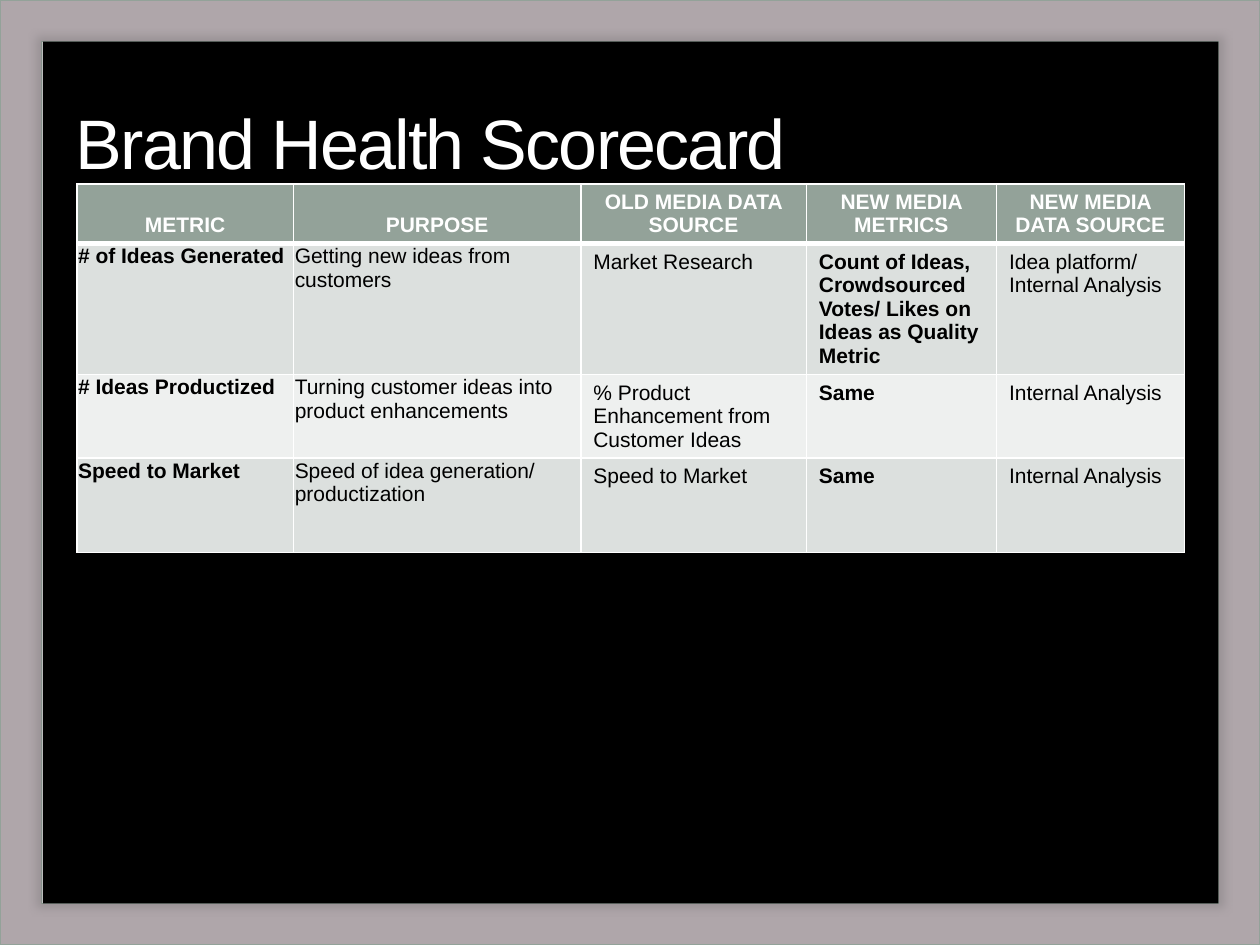
from lxml import etree
from pptx import Presentation
from pptx import util as u
from pptx.dml.color import RGBColor
from pptx.enum import shapes, text
from pptx.oxml import ns

HUES = {
    "white": "FFFFFF", "black": "000000", "mauve": "AFA6AA", "sage": "93A299",
    "shade": "595959", "band": "DCE0DE", "pale": "EEF0EF",
}
FONT = "Arial"
COLS = [1.72, 2.28, 1.79, 1.51, 1.49]
ROWS = [0.47, 1.04, 0.66, 0.75]
TIGHT = {0, 1}
BOLD = {0, 3}
DATA = [
    ["METRIC", "PURPOSE", "OLD MEDIA DATA SOURCE", "NEW MEDIA METRICS",
     "NEW MEDIA DATA SOURCE"],
    ["# of Ideas Generated", "Getting new ideas from customers", "Market Research",
     "Count of Ideas, Crowdsourced Votes/ Likes on Ideas as Quality Metric",
     "Idea platform/ Internal Analysis"],
    ["# Ideas Productized", "Turning customer ideas into product enhancements",
     "% Product Enhancement from Customer Ideas", "Same", "Internal Analysis"],
    ["Speed to Market", "Speed of idea generation/ productization",
     "Speed to Market", "Same", "Internal Analysis"],
]


def hue(name):
    return RGBColor.from_string(HUES[name])


def inches(box):
    return [u.Inches(n) for n in box]


def node(root, tag, **attrs):
    return etree.SubElement(root, ns.qn(tag), {k: str(v) for k, v in attrs.items()})


def style(par, size, color, bold=False):
    font = par.font
    font.name, font.size, font.bold = FONT, u.Pt(size), bold
    font.color.rgb = hue(color)


def add_panel(slide, kind, box, color):
    panel = slide.shapes.add_shape(kind, *inches(box))
    panel.shadow.inherit = False
    panel.fill.solid()
    panel.fill.fore_color.rgb = hue(color)
    panel.line.fill.background()
    slide.shapes.title.element.addprevious(panel.element)
    return panel


def add_back(slide, box):
    left, top, width, height = box
    frame = add_panel(slide, shapes.MSO_SHAPE.FRAME, box, "mauve")
    frame.adjustments[0] = 0.044
    frame.line.color.rgb = hue("sage")
    frame.line.width = u.Pt(0.75)

    inner = (left + 0.34, top + 0.33, width - 0.67, height - 0.66)
    board = add_panel(slide, shapes.MSO_SHAPE.RECTANGLE, inner, "black")
    glow = board.element.spPr.find(ns.qn("a:effectLst"))
    shade = node(glow, "a:outerShdw", blurRad=u.Pt(5), dist=0, dir=0,
                 sx=101000, sy=101000, algn="ctr", rotWithShape=0)
    tint = node(shade, "a:srgbClr", val=HUES["shade"])
    node(tint, "a:alpha", val=25000)


def add_title(slide, box):
    title = slide.shapes.title
    title.left, title.top, title.width, title.height = inches(box)
    frame = title.text_frame
    frame.text = "Brand Health Scorecard"
    frame.vertical_anchor = text.MSO_ANCHOR.MIDDLE
    par = frame.paragraphs[0]
    par.alignment = text.PP_ALIGN.LEFT
    style(par, 40, "white")
    par.runs[0].font._element.set("spc", "-100")


def set_edges(cell, widths):
    props = cell._tc.get_or_add_tcPr()
    for side, width in zip("LRTB", widths):
        line = node(props, "a:ln" + side, w=u.Pt(width))
        node(node(line, "a:solidFill"), "a:srgbClr", val=HUES["white"])


def fill_cell(cell, row, col, words):
    head = row == 0
    set_edges(cell, (1, 1, 3 if row == 1 else 1, 3 if head else 1))
    cell.fill.solid()
    cell.fill.fore_color.rgb = hue("sage" if head else ("pale", "band")[row % 2])
    cell.text = words
    par = cell.text_frame.paragraphs[0]
    style(par, 12, "white" if head else "black", head or col in BOLD)
    if head:
        cell.vertical_anchor = text.MSO_ANCHOR.BOTTOM
        par.alignment = text.PP_ALIGN.CENTER
    elif col in TIGHT:
        cell.margin_left = cell.margin_top = cell.margin_right = u.Inches(0.01)
        cell.margin_bottom = 0


def add_grid(slide, left, top):
    box = (left, top, sum(COLS), sum(ROWS))
    grid = slide.shapes.add_table(len(ROWS), len(COLS), *inches(box)).table
    for col, width in zip(grid.columns, COLS):
        col.width = u.Inches(width)
    for row, height in zip(grid.rows, ROWS):
        row.height = u.Inches(height)
    for row, line in enumerate(DATA):
        for col, words in enumerate(line):
            fill_cell(grid.cell(row, col), row, col, words)


def main():
    deck = Presentation()
    deck.slide_width, deck.slide_height = inches((10, 7.5))
    slide = deck.slides.add_slide(deck.slide_layouts[5])
    add_back(slide, (0, 0, 10, 7.5))
    add_title(slide, (0.5, 0.58, 9, 1.08))
    add_grid(slide, 0.61, 1.46)
    deck.save("out.pptx")


if __name__ == "__main__":
    main()
